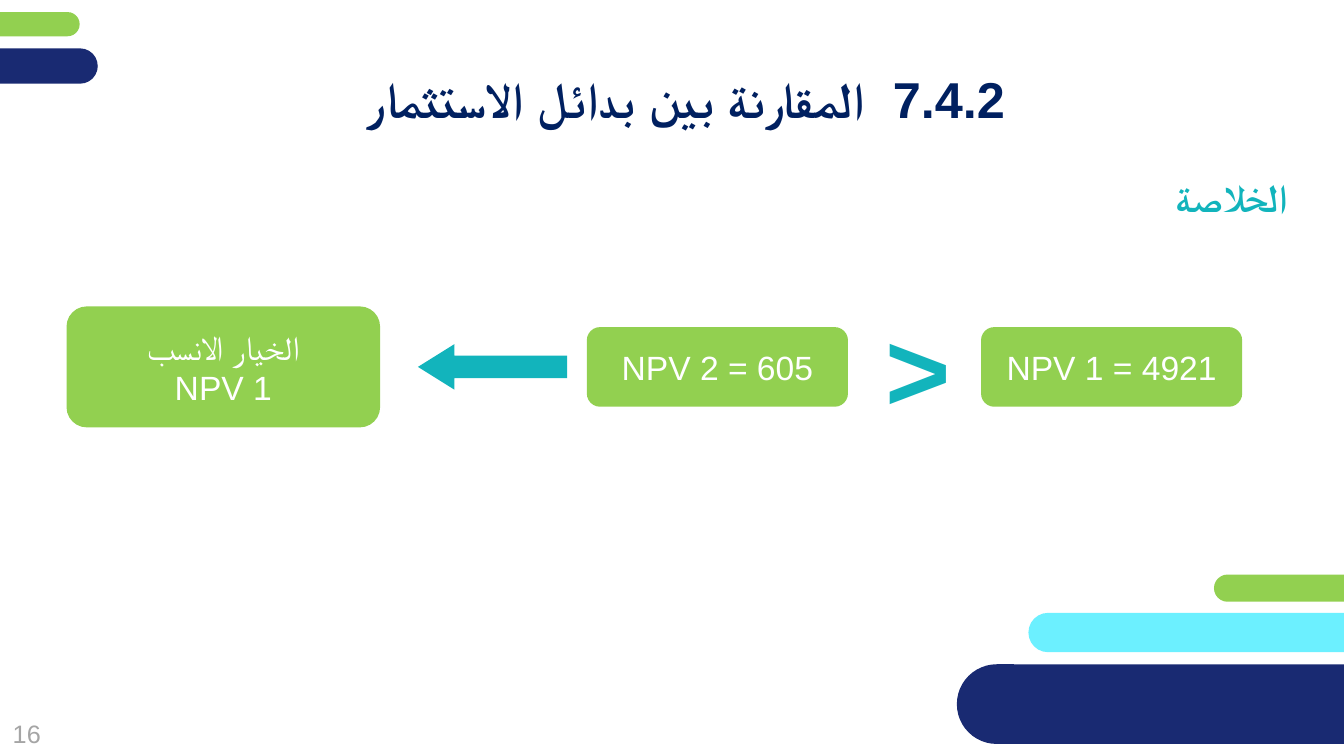
from pptx import Presentation
from pptx.dml.color import RGBColor
from pptx.enum import shapes, text
from pptx.oxml import ns
from pptx.util import Inches, Pt
from lxml import etree

GREEN, NAVY, CYAN, TEAL = "92D050", "192A72", "6CF0FF", "12B4BC"
BARS = [
    (-1.51, 0.12, 2.3, 0.24, GREEN),
    (-1.89, 0.48, 2.86, 0.35, NAVY),
    (10.2, 6.08, 5.21, 0.39, CYAN),
    (9.49, 6.59, 4.51, 0.79, NAVY),
    (12.04, 5.7, 2.59, 0.27, GREEN),
]
TITLE = "7.4.2  المقارنة بين بدائل الاستثمار"
HEAD = "الخلاصة"
SIGN = "<"
PAGE = "16"
MID = 3.64
CARDS = [
    (9.73, 2.59, 0.79, ["NPV 1 = 4921"]),
    (5.82, 2.59, 0.79, ["NPV 2 = 605"]),
    (0.66, 3.11, 1.2, ["الخيار الانسب", "NPV 1"]),
]
KINDS = shapes.MSO_SHAPE
ALIGN = text.PP_ALIGN
ANCHOR = text.MSO_ANCHOR


def color(code):
    return RGBColor.from_string(code)


def draw(kind, x, y, w, h, code):
    part = slide.shapes.add_shape(kind, Inches(x), Inches(y), Inches(w), Inches(h))
    part.shadow.inherit = False
    part.fill.solid()
    part.fill.fore_color.rgb = color(code)
    part.line.fill.background()
    return part


def write(part, lines, size, code, bold=False, align=ALIGN.CENTER,
          anchor=ANCHOR.MIDDLE, inset=True, rtl=True, indent=0, space=None):
    frame = part.text_frame
    frame.word_wrap = True
    frame.auto_size = text.MSO_AUTO_SIZE.NONE
    frame.vertical_anchor = anchor
    frame.margin_left = frame.margin_right = Inches(0.1 if inset else 0)
    frame.margin_top = frame.margin_bottom = Inches(0.05 if inset else 0)
    frame.text = "\n".join(lines)
    for para in frame.paragraphs:
        para.alignment = align
        if space:
            para.line_spacing = space
        font = para.font
        font.size, font.bold, font.name = Pt(size), bold, "Arial"
        font.color.rgb = color(code)
        props = para._p.get_or_add_pPr()
        if rtl:
            props.set("rtl", "1")
        props.set("marL", str(Inches(indent)))
        props.set("indent", "0")
        base = props.find(ns.qn("a:defRPr"))
        etree.SubElement(base, ns.qn("a:cs")).set("typeface", "Arial")


def label(x, y, w, h, line, size, code, **look):
    box = slide.shapes.add_textbox(Inches(x), Inches(y), Inches(w), Inches(h))
    write(box, [line], size, code, **look)


deck = Presentation()
deck.slide_width, deck.slide_height = Inches(13.33), Inches(7.5)
slide = deck.slides.add_slide(deck.slide_layouts[5])

for x, y, w, h, code in BARS:
    bar = draw(KINDS.ROUNDED_RECTANGLE, x, y, w, h, code)
    bar.adjustments[0] = 0.5

title = slide.shapes.title
title.left, title.top = Inches(1.18), Inches(0.43)
title.width, title.height = Inches(11.62), Inches(0.79)
write(title, [TITLE], 36, "002060", bold=True, inset=False, indent=0.38, space=1.5)

label(0.56, 1.72, 12.21, 0.39, HEAD, 28, TEAL, bold=True, align=ALIGN.RIGHT,
      anchor=ANCHOR.TOP, inset=False)
label(9.04, 3.28, 0.69, 0.71, SIGN, 80, TEAL, bold=True, align=ALIGN.RIGHT, indent=0.2)
label(-0.18, 6.99, 0.89, 0.57, PAGE, 18, "A5A5A5", rtl=False)

for x, w, h, lines in CARDS:
    card = draw(KINDS.FLOWCHART_ALTERNATE_PROCESS, x, MID - h / 2, w, h, GREEN)
    write(card, lines, 24, "FFFFFF")

arrow = draw(KINDS.DOWN_ARROW, 4.66, MID - 0.74, 0.45, 1.48, TEAL)
arrow.adjustments[0], arrow.adjustments[1] = 0.5, 0.8
arrow.rotation = 90

deck.save("out.pptx")
